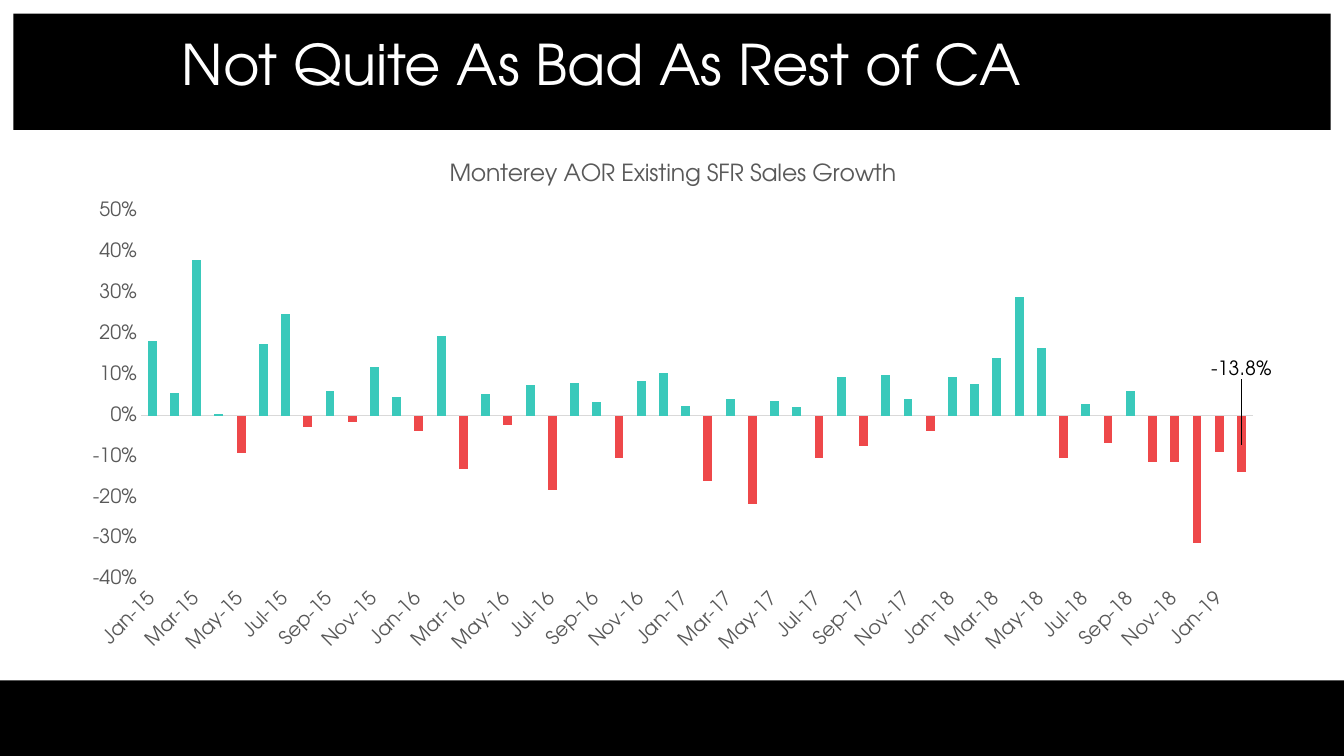
from lxml import etree
from pptx import Presentation, util as u
from pptx.chart.data import CategoryChartData
from pptx.dml.color import RGBColor
from pptx.enum import chart as ch, shapes, text
from pptx.oxml import parse_xml
from pptx.oxml.ns import qn

WIDTH, HEIGHT = 13.33, 7.5
FONT = "TeX Gyre Adventor"
BLACK, WHITE, GREY, PALE = "000000", "FFFFFF", "595959", "D9D9D9"
GROWTH, DECLINE = "3AC9BB", "EE484A"
CHART_NS = "http://schemas.openxmlformats.org/drawingml/2006/chart"

MONTH_NAMES = "Jan Feb Mar Apr May Jun Jul Aug Sep Oct Nov Dec".split()
SALES_GROWTH = [
    0.183, 0.055, 0.380, 0.005, -0.091, 0.177, 0.249, -0.027, 0.061, -0.016, 0.119, 0.047,
    -0.036, 0.195, -0.129, 0.054, -0.022, 0.075, -0.182, 0.080, 0.035, -0.103, 0.086, 0.105,
    0.025, -0.158, 0.041, -0.215, 0.036, 0.022, -0.103, 0.096, -0.073, 0.101, 0.042, -0.036,
    0.096, 0.077, 0.142, 0.290, 0.167, -0.104, 0.029, -0.067, 0.060, -0.113, -0.112, -0.310,
    -0.088, -0.138,
]
MONTHS = [f"{MONTH_NAMES[i % 12]}-{15 + i // 12}" for i in range(len(SALES_GROWTH))]


def rgb(color):
    return RGBColor.from_string(color)


def set_font(font, size, color):
    font.name, font.size, font.bold = FONT, u.Pt(size), False
    font.color.rgb = rgb(color)


def write(frame, content, size=14, color=BLACK, spacing=None):
    paragraph = frame.paragraphs[0]
    paragraph.line_spacing = spacing
    run = paragraph.add_run()
    run.text = content
    set_font(run.font, size, color)


def manual_layout(**settings):
    """Return a chart layout element; lengths are shares of the chart's size."""
    items = "".join(f'<c:{key} val="{value}"/>' for key, value in settings.items())
    return parse_xml(f'<c:layout xmlns:c="{CHART_NS}"><c:manualLayout>{items}'
                     '</c:manualLayout></c:layout>')


class SlideBuilder:
    """Places elements on one slide, with boxes as shares of its width and height."""

    def __init__(self, deck):
        self.slide = deck.slides.add_slide(deck.slide_layouts[5])

    def box(self, left, top, width, height):
        return [u.Inches(share * side) for share, side in
                zip((left, top, width, height), (WIDTH, HEIGHT) * 2)]

    def band(self, *shares):
        band = self.slide.shapes.add_shape(shapes.MSO_SHAPE.RECTANGLE, *self.box(*shares))
        band.shadow.inherit = False
        band.fill.solid()
        band.fill.fore_color.rgb = rgb(BLACK)
        band.line.fill.background()

    def title(self, content, *shares):
        title = self.slide.shapes.title
        title.left, title.top, title.width, title.height = self.box(*shares)
        frame = title.text_frame
        frame.word_wrap = True
        frame.auto_size = text.MSO_AUTO_SIZE.NONE
        frame.vertical_anchor = text.MSO_ANCHOR.MIDDLE
        write(frame, content, size=40, color=WHITE, spacing=0.9)
        frame.paragraphs[0].alignment = text.PP_ALIGN.LEFT
        self.slide.shapes._spTree.append(title._element)  # in front of the bands

    def growth_chart(self, heading, months, growth, *shares):
        data = CategoryChartData(number_format="0.0%")
        data.categories = months
        data.add_series("Series 1", growth)
        chart = self.slide.shapes.add_chart(
            ch.XL_CHART_TYPE.COLUMN_STACKED, *self.box(*shares), data).chart
        set_font(chart.font, 14, BLACK)
        chart.has_legend = False
        write(chart.chart_title.text_frame, heading, size=16.8, color=GREY)
        chart.chart_title.include_in_layout = False

        plot = chart.plots[0]
        plot.gap_width, plot.overlap, plot.vary_by_categories = 150, 100, False
        plot._element.getparent().insert(0, manual_layout(
            layoutTarget="inner", xMode="edge", yMode="edge", x=0.06, y=0.134, w=0.92, h=0.704))
        for old in plot._element.getparent().findall(qn("c:layout"))[1:]:
            old.getparent().remove(old)

        self.style_axes(chart)
        series = plot.series[0]
        series.invert_if_negative = False
        for index, value in enumerate(growth):
            bar = series if index == 0 else series.points[index]
            if index == 0 or value < 0:
                bar.format.fill.solid()
                bar.format.fill.fore_color.rgb = rgb(DECLINE if value < 0 else GROWTH)
        self.label_latest(series, len(growth) - 1)

    def style_axes(self, chart):
        months, percent = chart.category_axis, chart.value_axis
        for axis in (months, percent):
            axis.has_major_gridlines = False
            axis.major_tick_mark = axis.minor_tick_mark = ch.XL_TICK_MARK.NONE
            set_font(axis.tick_labels.font, 14, GREY)
        months.tick_label_position = ch.XL_TICK_LABEL_POSITION.LOW
        months.format.line.color.rgb = rgb(PALE)
        months.format.line.width = u.Pt(0.75)
        months._element.find(qn("c:txPr")).find(qn("a:bodyPr")).set("rot", "-2700000")
        skip = etree.Element(qn("c:tickLblSkip"), val="2")
        months._element.find(qn("c:noMultiLvlLbl")).addprevious(skip)
        percent.minimum_scale, percent.maximum_scale, percent.major_unit = -0.4, 0.5, 0.1
        percent.tick_labels.number_format = "0%"
        percent.tick_labels.number_format_is_linked = False
        percent.format.line.fill.background()

    def label_latest(self, series, index):
        """Lift the last bar's label above the axis, with a leader line to the bar."""
        set_font(series.points[index].data_label.font, 14, BLACK)
        labels = series.data_labels
        labels.show_value = False
        label = labels._element.find(qn("c:dLbl"))
        label.find(qn("c:idx")).addnext(manual_layout(x=0, y=-0.141))
        labels._element.append(parse_xml(
            f'<c:extLst xmlns:c="{CHART_NS}"><c:ext uri="{{CE6537A1-D6FC-4f65-9D91-7224C49458BB}}" '
            'xmlns:c15="http://schemas.microsoft.com/office/drawing/2012/chart">'
            '<c15:showLeaderLines val="1"/></c:ext></c:extLst>'))


def main():
    deck = Presentation()
    deck.slide_width, deck.slide_height = u.Inches(WIDTH), u.Inches(HEIGHT)
    page = SlideBuilder(deck)
    page.band(0, 0.9, 1, 0.1)
    page.band(0.01, 0.018, 0.98, 0.154)
    page.title("Not Quite As Bad As Rest of CA", 0.1275, 0.044, 0.853, 0.09)
    page.growth_chart("Monterey AOR Existing SFR Sales Growth", MONTHS, SALES_GROWTH,
                      0.051, 0.187, 0.899, 0.692)
    deck.save("out.pptx")


if __name__ == "__main__":
    main()
